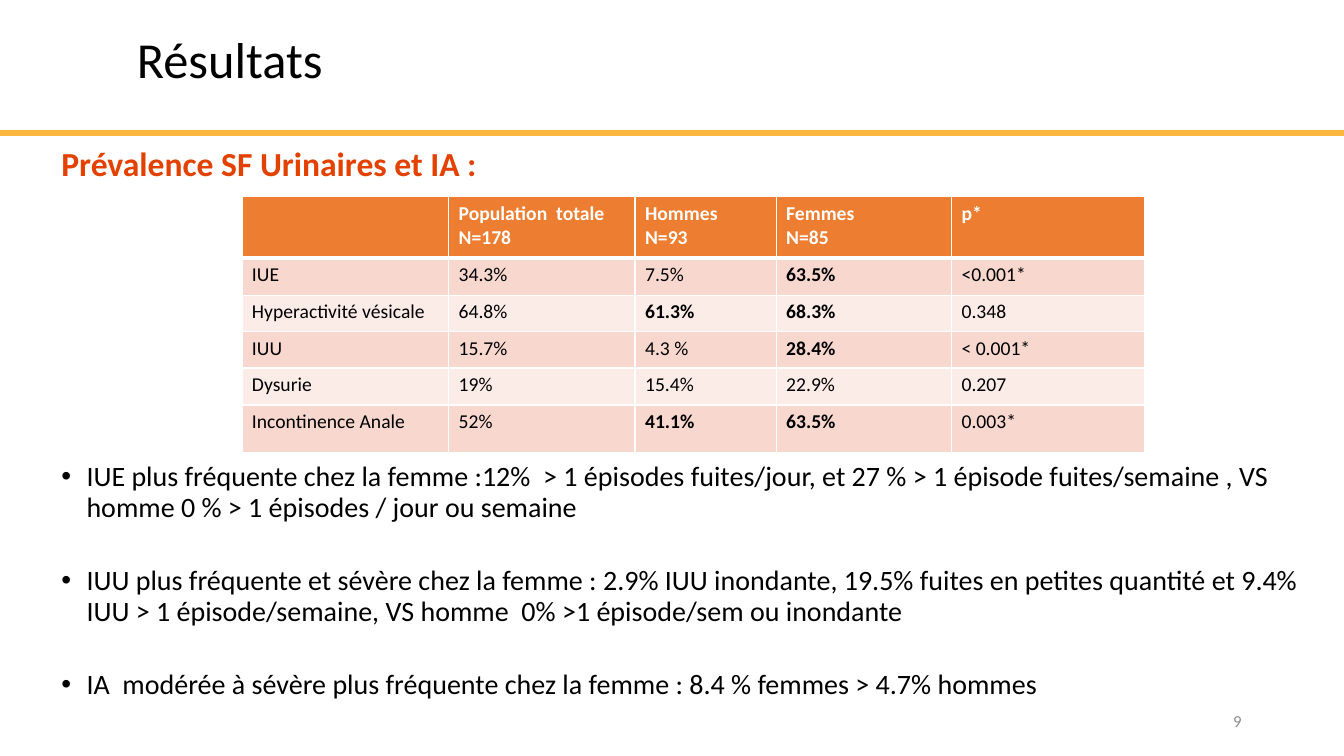
from lxml import etree
from pptx import Presentation
from pptx.dml.color import RGBColor
from pptx.enum import shapes, text
from pptx.oxml import ns
from pptx.util import Pt

FONT = "Calibri"
BLACK = RGBColor(0x00, 0x00, 0x00)
WHITE = RGBColor(0xFF, 0xFF, 0xFF)
GREY = RGBColor(0x8C, 0x8C, 0x8C)
YELLOW = RGBColor(0xFD, 0xB6, 0x3E)
RED_ORANGE = RGBColor(0xE2, 0x41, 0x00)
HEADER_ORANGE = RGBColor(0xED, 0x7D, 0x31)
BANDS = (RGBColor(0xF8, 0xD7, 0xCE), RGBColor(0xFC, 0xEC, 0xE8))

SLIDE_WIDTH, SLIDE_HEIGHT = 960, 540
BODY_LEFT, BODY_WIDTH = 36.72, 899.28

COLUMN_WIDTHS = (147.6, 133.2, 100.8, 125.3, 138.2)
ROW_HEIGHTS = (44, 26.5, 26, 26, 26.5, 34)
HEADER = ("", "Population  totale\nN=178", "Hommes\nN=93", "Femmes\nN=85", "p*")
# Each row: its cells, then the columns set in bold.
ROWS = (
    (("IUE", "34.3%", "7.5%", "63.5%", "<0.001*"), (3,)),
    (("Hyperactivité vésicale", "64.8%", "61.3%", "68.3%", "0.348"), (2, 3)),
    (("IUU", "15.7%", "4.3 %", "28.4%", "< 0.001*"), (3,)),
    (("Dysurie", "19%", "15.4%", "22.9%", "0.207"), ()),
    (("Incontinence Anale", "52%", "41.1%", "63.5%", "0.003*"), (2, 3)),
)
FINDINGS = (
    "IUE plus fréquente chez la femme :12%  > 1 épisodes fuites/jour, et 27 % > 1 épisode "
    "fuites/semaine , VS homme 0 % > 1 épisodes / jour ou semaine",
    "IUU plus fréquente et sévère chez la femme : 2.9% IUU inondante, 19.5% fuites en petites "
    "quantité et 9.4% IUU > 1 épisode/semaine, VS homme  0% >1 épisode/sem ou inondante",
    "IA  modérée à sévère plus fréquente chez la femme : 8.4 % femmes > 4.7% hommes",
)


def write(frame, content, size, color=BLACK, bold=False, align=text.PP_ALIGN.LEFT,
          line_spacing=None, gap=0, bullet=None):
    """Write one paragraph per line of content; gap is the space between them."""
    for index, line in enumerate(content.split("\n")):
        paragraph = frame.add_paragraph() if index else frame.paragraphs[0]
        paragraph.alignment = align
        paragraph.space_before = Pt(gap if index else 0)
        if line_spacing:
            paragraph.line_spacing = line_spacing
        run = paragraph.add_run()
        run.text = line
        run.font.name = FONT
        run.font.size = Pt(size)
        run.font.bold = bold
        run.font.color.rgb = color
        if bullet:
            add_bullet(paragraph, bullet)


def add_bullet(paragraph, character, indent=18):
    properties = paragraph._p.get_or_add_pPr()
    properties.set("marL", str(Pt(indent)))
    properties.set("indent", str(-Pt(indent)))
    etree.SubElement(properties, ns.qn("a:buFont")).set("typeface", "Arial")
    etree.SubElement(properties, ns.qn("a:buChar")).set("char", character)


def add_text(slide, box, content, anchor=text.MSO_ANCHOR.TOP, **style):
    frame = slide.shapes.add_textbox(*map(Pt, box)).text_frame
    frame.word_wrap = True
    frame.vertical_anchor = anchor
    write(frame, content, **style)


def add_rule(slide, y):
    rule = slide.shapes.add_connector(
        shapes.MSO_CONNECTOR.STRAIGHT, Pt(0), Pt(y), Pt(SLIDE_WIDTH), Pt(y))
    rule.line.color.rgb = YELLOW
    rule.line.width = Pt(4.5)
    etree.SubElement(rule._element.spPr, ns.qn("a:effectLst"))


def add_border(cell, side, width):
    line = etree.SubElement(cell._tc.get_or_add_tcPr(), ns.qn(f"a:ln{side}"), w=str(Pt(width)))
    fill = etree.SubElement(line, ns.qn("a:solidFill"))
    etree.SubElement(fill, ns.qn("a:srgbClr")).set("val", str(WHITE))


def fill_cell(cell, content, fill, top=1, bottom=1, **style):
    for side, width in (("L", 1), ("R", 1), ("T", top), ("B", bottom)):
        add_border(cell, side, width)
    cell.fill.solid()
    cell.fill.fore_color.rgb = fill
    write(cell.text_frame, content, size=14, **style)


def add_prevalence_table(slide, left, top):
    table = slide.shapes.add_table(
        len(ROW_HEIGHTS), len(COLUMN_WIDTHS), Pt(left), Pt(top),
        Pt(sum(COLUMN_WIDTHS)), Pt(sum(ROW_HEIGHTS))).table
    for column, width in zip(table.columns, COLUMN_WIDTHS):
        column.width = Pt(width)
    for row, height in zip(table.rows, ROW_HEIGHTS):
        row.height = Pt(height)
    for column, label in enumerate(HEADER):
        fill_cell(table.cell(0, column), label, HEADER_ORANGE, bottom=3, color=WHITE, bold=True)
    for row, (values, bold_columns) in enumerate(ROWS, start=1):
        for column, value in enumerate(values):
            fill_cell(table.cell(row, column), value, BANDS[(row - 1) % 2],
                      top=3 if row == 1 else 1, bold=column in bold_columns)


def main():
    presentation = Presentation()
    presentation.slide_width = Pt(SLIDE_WIDTH)
    presentation.slide_height = Pt(SLIDE_HEIGHT)
    slide = presentation.slides.add_slide(presentation.slide_layouts[6])

    add_rule(slide, 95)
    add_text(slide, (90.7, 11.5, 860, 56.2), "Résultats", text.MSO_ANCHOR.BOTTOM,
             size=36, line_spacing=0.9)
    add_text(slide, (BODY_LEFT, 101.5, BODY_WIDTH, 36), "Prévalence SF Urinaires et IA :",
             size=24, color=RED_ORANGE, bold=True, line_spacing=0.9)
    add_text(slide, (BODY_LEFT, 327, BODY_WIDTH, 190), "\n".join(FINDINGS),
             size=20, line_spacing=0.9, gap=31, bullet="•")
    add_text(slide, (678, 500.5, 216, 28.8), "9", text.MSO_ANCHOR.MIDDLE,
             size=12, color=GREY, align=text.PP_ALIGN.RIGHT)
    add_prevalence_table(slide, 172.8, 140.4)
    presentation.save("out.pptx")


if __name__ == "__main__":
    main()
